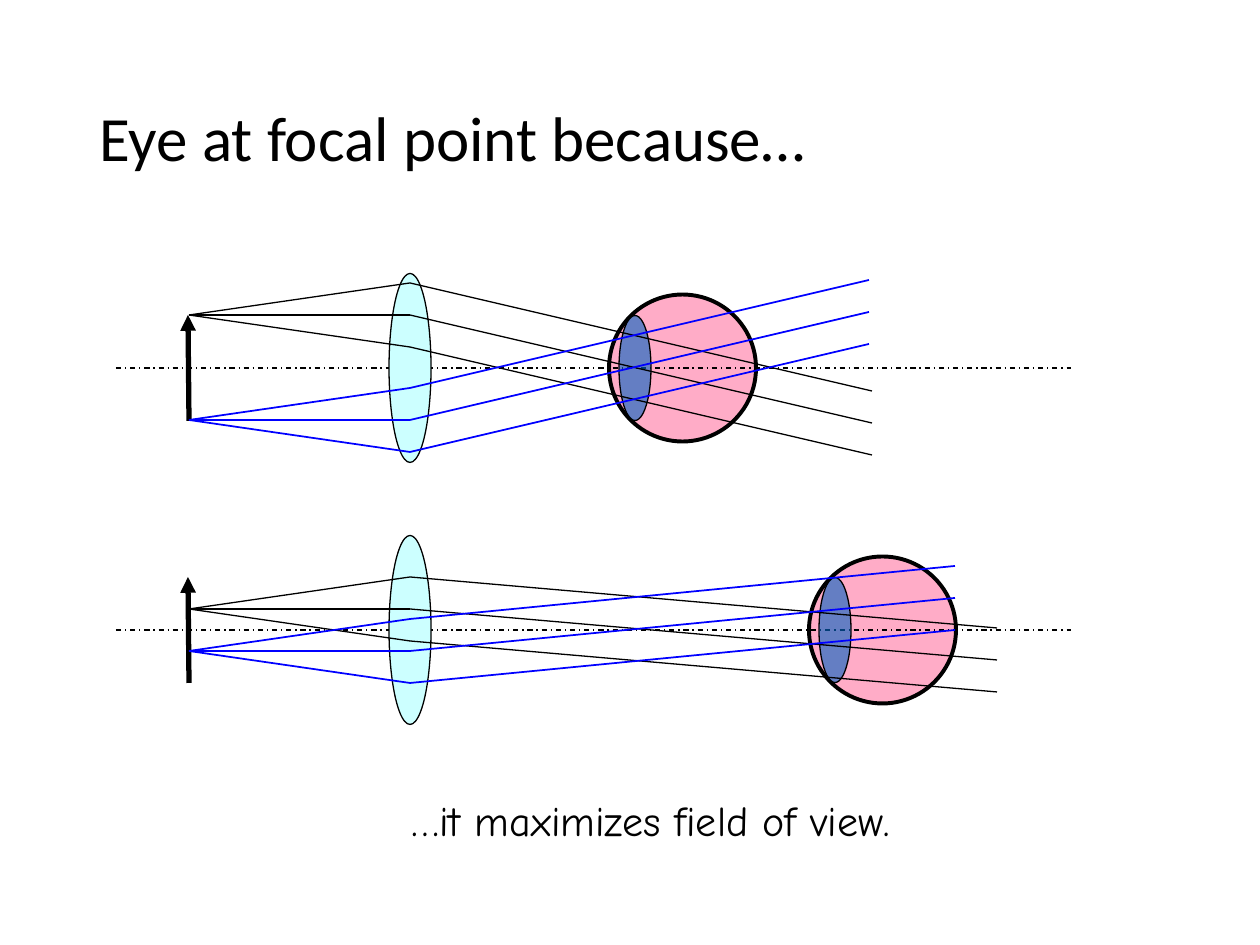
import pptx
import pptx.util
import pptx.dml.color
import pptx.enum.dml
import pptx.enum.shapes
import pptx.enum.text
import pptx.oxml
import pptx.oxml.ns

RGBColor = pptx.dml.color.RGBColor
BLACK = RGBColor(0x00, 0x00, 0x00)
BLUE = RGBColor(0x00, 0x00, 0xFF)
PINK = RGBColor(0xFF, 0x66, 0x99)
CYAN = RGBColor(0xCC, 0xFF, 0xFF)
PUPIL_BLUE = RGBColor(0x05, 0x63, 0xC1)

# Content
TITLE = "Eye at focal point because…"
CAPTION = "…it maximizes field of view."
# ray bundles: colour, width in points, height at the object, far end x, rise beyond the lens
DIAGRAMS = [
    {"axis": 368, "eye": 609, "bundles": [(BLACK, 0.75, -53, 872, 108),
                                          (BLUE, 1, 52, 869, -108)]},
    {"axis": 630, "eye": 809, "bundles": [(BLACK, 0.75, -21, 997, 51),
                                          (BLUE, 1, 21, 955, -53)]},
]

# Geometry in px
PX_PER_INCH = 126
AXIS_LEFT, AXIS_RIGHT = 116, 1071
OBJECT_X, OBJECT_HALF = 189, 53
LENS_X, LENS_WIDTH, LENS_HEIGHT = 410, 42, 189
EYE_SIZE = 147
PUPIL_INSET, PUPIL_WIDTH, PUPIL_HEIGHT = 26, 32, 105
FAN = (-32, 0, 32)


def px(value):
    return pptx.util.Emu(round(value * 914400 / PX_PER_INCH))


def add_line(page, start, end, color, width):
    line = page.shapes.add_connector(
        pptx.enum.shapes.MSO_CONNECTOR.STRAIGHT, *map(px, (*start, *end)))
    line.line.color.rgb = color
    line.line.width = pptx.util.Pt(width)
    properties = line.element.spPr
    properties.append(pptx.oxml.parse_xml(
        "<a:effectLst %s/>" % pptx.oxml.ns.nsdecls("a")))
    return line


def add_ellipse(page, center, width, height, fill, outline, opacity=100):
    x, y = center
    ellipse = page.shapes.add_shape(
        pptx.enum.shapes.MSO_SHAPE.OVAL,
        *map(px, (x - width / 2, y - height / 2, width, height)))
    ellipse.shadow.inherit = False
    ellipse.fill.solid()
    ellipse.fill.fore_color.rgb = fill
    ellipse.line.color.rgb = BLACK
    ellipse.line.width = pptx.util.Pt(outline)
    if opacity < 100:
        color = ellipse.element.spPr.find(".//" + pptx.oxml.ns.qn("a:srgbClr"))
        color.append(pptx.oxml.parse_xml('<a:alpha %s val="%d"/>' % (
            pptx.oxml.ns.nsdecls("a"), opacity * 1000)))


def write(shape, text, font_name, size):
    shape.text_frame.text = text
    para = shape.text_frame.paragraphs[0]
    para.alignment = pptx.enum.text.PP_ALIGN.LEFT
    para.font.name = font_name
    para.font.size = pptx.util.Pt(size)
    para.font.color.rgb = BLACK
    return para


def draw_diagram(page, axis, eye, bundles):
    # Eyeball, optical axis and lens
    add_ellipse(page, (eye + EYE_SIZE / 2, axis), EYE_SIZE, EYE_SIZE, PINK, 2.25, 54)
    axis_line = add_line(page, (AXIS_LEFT, axis), (AXIS_RIGHT, axis), BLACK, 0.75)
    axis_line.line.dash_style = pptx.enum.dml.MSO_LINE.DASH_DOT
    add_ellipse(page, (LENS_X, axis), LENS_WIDTH, LENS_HEIGHT, CYAN, 0.75)

    # Object arrow
    arrow = add_line(page, (OBJECT_X, axis + OBJECT_HALF),
                     (OBJECT_X - 1, axis - OBJECT_HALF), BLACK, 3)
    arrow.line.fill.solid()
    arrow.line.fill.fore_color.rgb = BLACK
    arrow.element.spPr.find(pptx.oxml.ns.qn("a:ln")).append(pptx.oxml.parse_xml(
        '<a:tailEnd %s type="triangle"/>' % pptx.oxml.ns.nsdecls("a")))

    # Lens of the eye
    add_ellipse(page, (eye + PUPIL_INSET, axis), PUPIL_WIDTH, PUPIL_HEIGHT,
                PUPIL_BLUE, 0.75, 62)

    # Rays fan out to the lens and leave it in parallel
    for color, width, height, end_x, rise in bundles:
        source = axis + height
        for spread in FAN:
            bend = (LENS_X, source + spread)
            add_line(page, (OBJECT_X, source), bend, color, width)
            add_line(page, bend, (end_x, bend[1] + rise), color, width)


def main():
    deck = pptx.Presentation()
    deck.slide_width, deck.slide_height = px(1260), px(945)
    page = deck.slides.add_slide(deck.slide_layouts[5])

    # Title
    title = page.shapes.title
    title.left, title.top, title.width, title.height = map(px, (87, 50, 1086, 183))
    title.text_frame.vertical_anchor = pptx.enum.text.MSO_ANCHOR.MIDDLE
    write(title, TITLE, "Calibri", 36).line_spacing = 0.9

    for diagram in DIAGRAMS:
        draw_diagram(page, **diagram)

    # Caption
    caption = page.shapes.add_textbox(*map(px, (399, 788, 542, 63)))
    caption.text_frame.word_wrap = False
    caption.text_frame.auto_size = pptx.enum.text.MSO_AUTO_SIZE.SHAPE_TO_FIT_TEXT
    write(caption, CAPTION, "Comic Neue", 24)

    deck.save("out.pptx")


if __name__ == "__main__":
    main()
